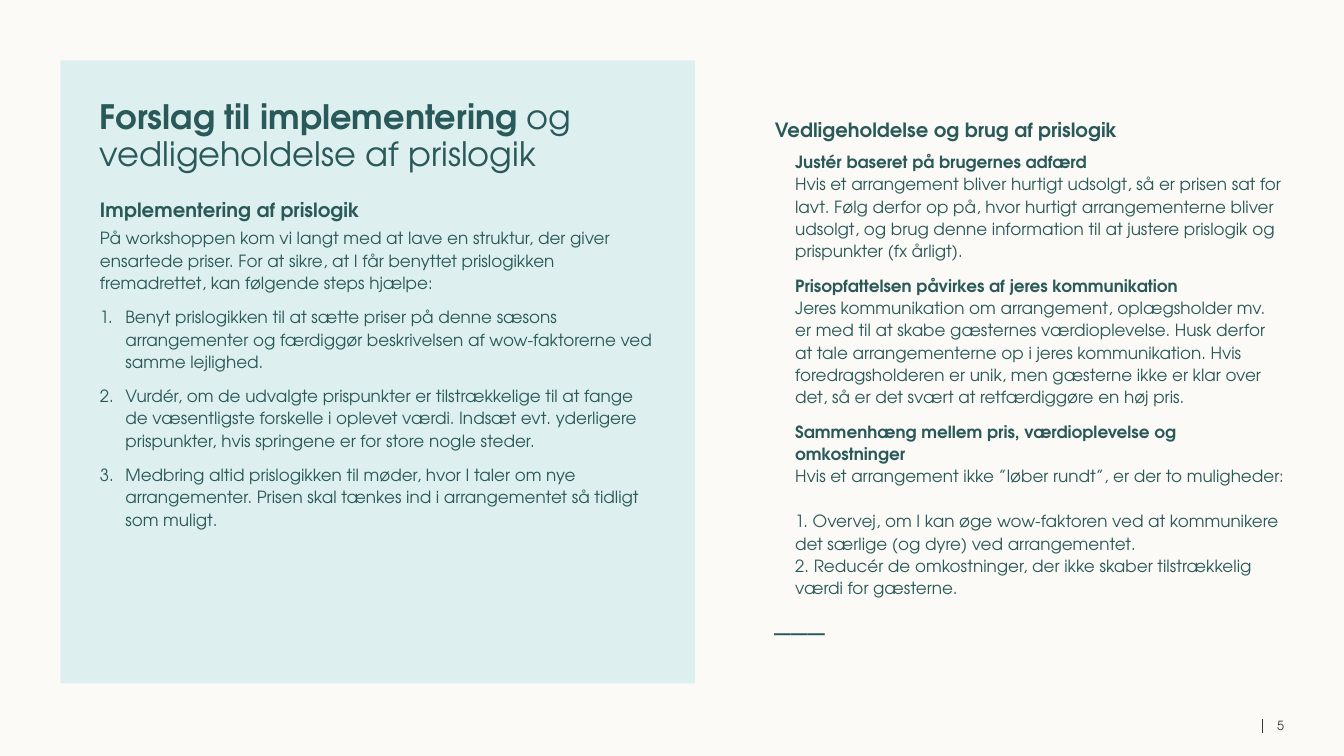
from lxml import etree
from pptx import Presentation
from pptx.dml.color import RGBColor
from pptx.enum import shapes, text
from pptx.oxml.ns import qn
from pptx.util import Cm, Pt

FONT = "TeX Gyre Adventor"
CREAM = RGBColor(0xFC, 0xFA, 0xF6)
MINT = RGBColor(0xDD, 0xEF, 0xEF)
GREEN = RGBColor(0x29, 0x59, 0x58)
GREY = RGBColor(0x37, 0x36, 0x36)

TITLE = ("Forslag til implementering ", "og vedligeholdelse af prislogik")
STEPS_HEADING = "Implementering af prislogik"
STEPS_INTRO = (
    "På workshoppen kom vi langt med at lave en struktur, der giver ensartede priser. "
    "For at sikre, at I får benyttet prislogikken fremadrettet, kan følgende steps hjælpe:"
)
STEPS = [
    "Benyt prislogikken til at sætte priser på denne sæsons arrangementer og færdiggør "
    "beskrivelsen af wow-faktorerne ved samme lejlighed.",
    "Vurdér, om de udvalgte prispunkter er tilstrækkelige til at fange de væsentligste "
    "forskelle i oplevet værdi. Indsæt evt. yderligere prispunkter, hvis springene er "
    "for store nogle steder.",
    "Medbring altid prislogikken til møder, hvor I taler om nye arrangementer. Prisen "
    "skal tænkes ind i arrangementet så tidligt som muligt.",
]
UPKEEP_HEADING = "Vedligeholdelse og brug af prislogik"
UPKEEP = [
    ("Justér baseret på brugernes adfærd", [
        "Hvis et arrangement bliver hurtigt udsolgt, så er prisen sat for lavt. Følg derfor "
        "op på, hvor hurtigt arrangementerne bliver udsolgt, og brug denne information til "
        "at justere prislogik og prispunkter (fx årligt).",
    ]),
    ("Prisopfattelsen påvirkes af jeres kommunikation", [
        "Jeres kommunikation om arrangement, oplægsholder mv. er med til at skabe gæsternes "
        "værdioplevelse. Husk derfor at tale arrangementerne op i jeres kommunikation. Hvis "
        "foredragsholderen er unik, men gæsterne ikke er klar over det, så er det svært at "
        "retfærdiggøre en høj pris.",
    ]),
    ("Sammenhæng mellem pris, værdioplevelse og omkostninger", [
        "Hvis et arrangement ikke ”løber rundt”, er der to muligheder: ",
        "1. Overvej, om I kan øge wow-faktoren ved at kommunikere det særlige (og dyre) "
        "ved arrangementet. ",
        "2. Reducér de omkostninger, der ikke skaber tilstrækkelig værdi for gæsterne.",
    ]),
]
CLOSING_RULE = "___"
PAGE = "5"

WIDTH, HEIGHT = Cm(33.87), Cm(19.05)
UPKEEP_LEFT = Cm(18.03)
STEP_INDENT, UPKEEP_INDENT = Cm(0.64), Cm(0.51)


def add_panel(slide, left, top, width, height, fill, inset, anchor):
    panel = slide.shapes.add_shape(
        shapes.MSO_SHAPE.RECTANGLE, left, top, width, height)
    panel.shadow.inherit = False
    panel.fill.solid()
    panel.fill.fore_color.rgb = fill
    panel.line.fill.background()
    frame = panel.text_frame
    frame.word_wrap = True
    frame.vertical_anchor = anchor
    frame.margin_left = frame.margin_right = inset
    frame.margin_top = frame.margin_bottom = inset
    return frame


def add_paragraph(frame, lines, size, leading=None, before=0, after=0, bold=None,
                  indent=0, numbered=False, color=GREEN, align=text.PP_ALIGN.LEFT):
    first = frame.paragraphs[0]
    paragraph = frame.add_paragraph() if first.runs else first
    props = paragraph._p.get_or_add_pPr()
    if indent:
        props.set("marL", str(indent))
        props.set("indent", str(-indent if numbered else 0))
    if numbered:
        etree.SubElement(props, qn("a:buAutoNum"), type="arabicPeriod")
    paragraph.alignment = align
    paragraph.space_before, paragraph.space_after = Pt(before), Pt(after)
    if leading:
        paragraph.line_spacing = Pt(leading)
    font = paragraph.font
    font.name, font.size, font.bold = FONT, Pt(size), bold
    font.color.rgb = color
    for number, line in enumerate(lines):
        if number:
            paragraph.add_line_break()
        paragraph.add_run().text = line
    return paragraph


def main():
    deck = Presentation()
    deck.slide_width, deck.slide_height = WIDTH, HEIGHT
    slide = deck.slides.add_slide(deck.slide_layouts[6])
    top, middle = text.MSO_ANCHOR.TOP, text.MSO_ANCHOR.MIDDLE

    add_panel(slide, 0, 0, WIDTH, HEIGHT, CREAM, 0, top)

    steps = add_panel(slide, Cm(1.52), Cm(1.52), Cm(16), Cm(15.7), MINT, Cm(1), top)
    title = add_paragraph(steps, TITLE[:1], 24, leading=26, after=18)
    title.runs[0].font.bold = True
    title.add_run().text = TITLE[1]
    add_paragraph(steps, [STEPS_HEADING], 14, after=3, bold=True)
    add_paragraph(steps, [STEPS_INTRO], 12, leading=16, after=6)
    for step in STEPS:
        add_paragraph(steps, [step], 12, leading=16, before=2.4, after=6,
                      indent=STEP_INDENT, numbered=True)

    upkeep = add_panel(slide, UPKEEP_LEFT, 0, WIDTH - UPKEEP_LEFT, HEIGHT,
                       CREAM, Cm(1.5), middle)
    add_paragraph(upkeep, [UPKEEP_HEADING], 14, after=6, bold=True)
    for number, (heading, body) in enumerate(UPKEEP):
        advice = add_paragraph(upkeep, [heading, *body], 12, leading=16,
                               before=2.4 if number else 0, after=6,
                               indent=UPKEEP_INDENT)
        advice.runs[0].font.bold = True
    add_paragraph(upkeep, [CLOSING_RULE], 24, leading=18, before=4.8,
                  align=text.PP_ALIGN.JUSTIFY)

    page = slide.shapes.add_textbox(Cm(30.91), Cm(18.08), Cm(1.45), Cm(0.38)).text_frame
    page.word_wrap = True
    page.vertical_anchor = middle
    page.margin_left = page.margin_right = page.margin_top = page.margin_bottom = 0
    add_paragraph(page, [PAGE], 9, color=GREY, align=text.PP_ALIGN.RIGHT)

    divider = slide.shapes.add_connector(
        shapes.MSO_CONNECTOR.STRAIGHT, Cm(31.8), Cm(18.11), Cm(31.8), Cm(18.47))
    divider.line.color.rgb = GREY
    divider.line.width = Pt(0.25)
    etree.SubElement(divider._element.spPr, qn("a:effectLst"))

    deck.save("out.pptx")


if __name__ == "__main__":
    main()
